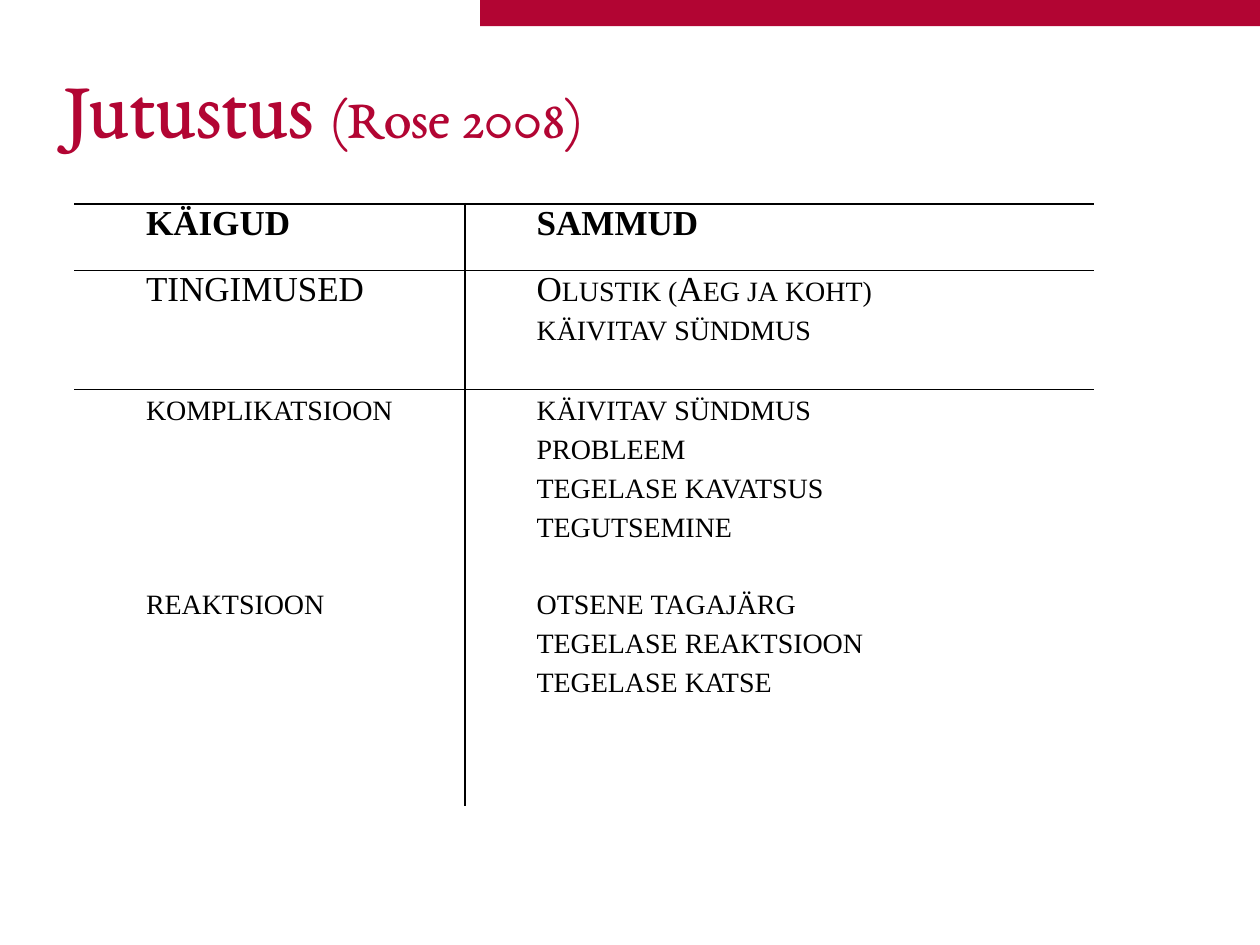
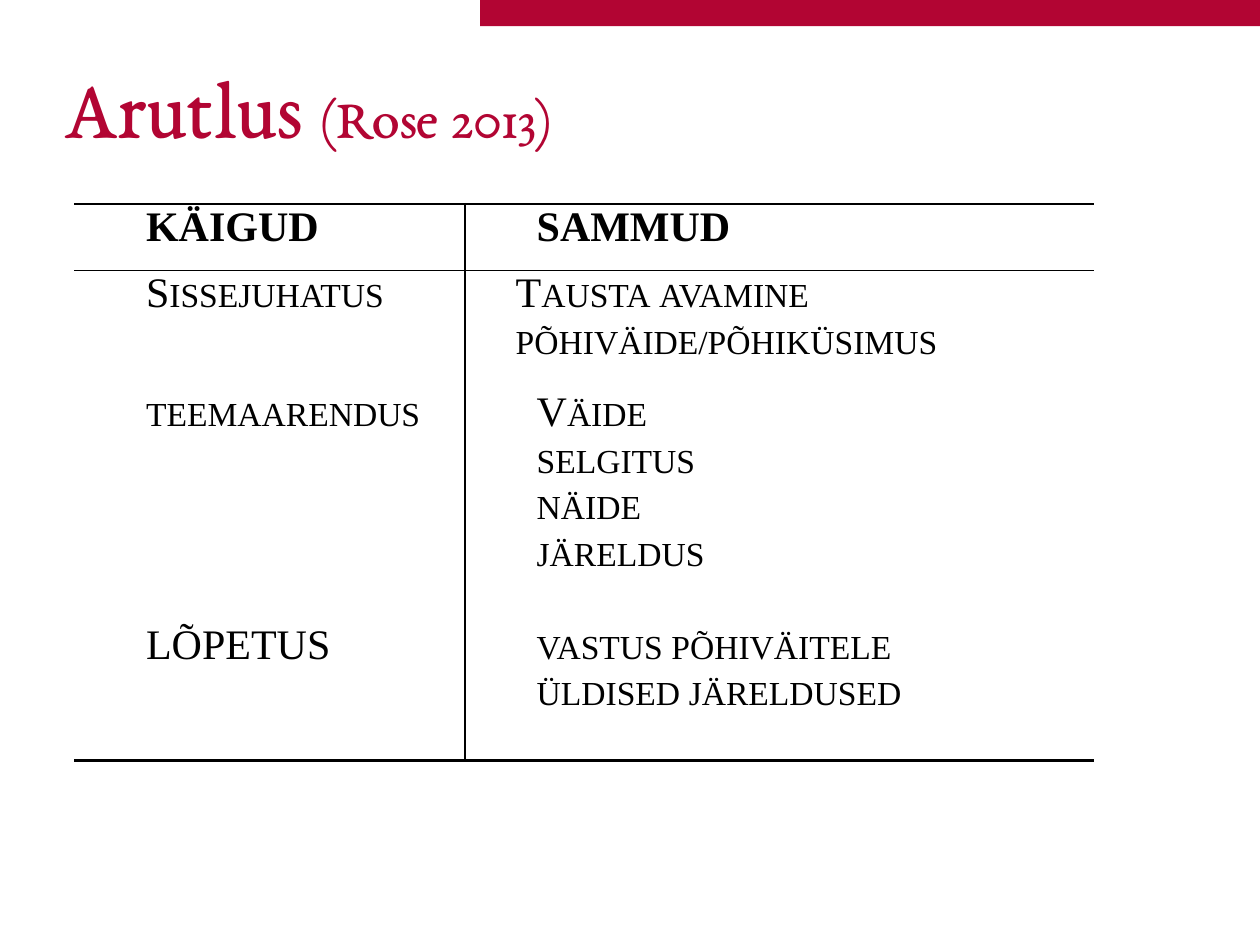
from pptx import Presentation
from pptx.dml.color import RGBColor
from pptx.enum import shapes, text
from pptx.oxml import parse_xml
from pptx.oxml.ns import nsdecls
from pptx.util import Pt

CRIMSON = RGBColor(0xB2, 0x05, 0x33)
BLACK = RGBColor(0, 0, 0)
TITLE_FONT = "EB Garamond"
TABLE_FONT = "Times New Roman"
SLIDE_WIDTH, SLIDE_HEIGHT = 720, 540
BAND_LEFT, BAND_HEIGHT = 274.3, 15
COLUMN_WIDTHS = (223.2, 359.3)
DIVIDER = 1
INDENT, SHORT_INDENT = 36, 24


class Deck:
    def __init__(self):
        self.presentation = Presentation()
        self.presentation.slide_width = Pt(SLIDE_WIDTH)
        self.presentation.slide_height = Pt(SLIDE_HEIGHT)
        self.slide = None

    def add_slide(self, title, source):
        self.slide = self.presentation.slides.add_slide(
            self.presentation.slide_layouts[5])
        self.band()
        self.title(title, source)

    def band(self):
        shape = self.slide.shapes.add_shape(
            shapes.MSO_SHAPE.RECTANGLE, Pt(BAND_LEFT), 0,
            Pt(SLIDE_WIDTH - BAND_LEFT), Pt(BAND_HEIGHT))
        shape.shadow.inherit = False
        shape.fill.solid()
        shape.fill.fore_color.rgb = CRIMSON
        shape.line.fill.background()

    def title(self, title, source):
        shape = self.slide.shapes.title
        shape.left, shape.top = Pt(36), Pt(21.6)
        shape.width, shape.height = Pt(647.3), Pt(89.3)
        frame = shape.text_frame
        frame.margin_left = frame.margin_right = 0
        frame.margin_top = frame.margin_bottom = 0
        frame.vertical_anchor = text.MSO_ANCHOR.MIDDLE
        frame.auto_size = text.MSO_AUTO_SIZE.NONE
        frame.word_wrap = True
        paragraph = frame.paragraphs[0]
        paragraph.alignment = text.PP_ALIGN.LEFT
        paragraph.line_spacing = 0.75
        self.run(paragraph, title + " ", TITLE_FONT, 48, CRIMSON)
        self.run(paragraph, source, TITLE_FONT, 32, CRIMSON)

    def run(self, paragraph, words, font, size, color, bold=False):
        run = paragraph.add_run()
        run.text = words
        run.font.name = font
        run.font.size = Pt(size)
        run.font.color.rgb = color
        run.font.bold = bold
        return run

    def table(self, rows, heights, rules, size, short_rows=()):
        """Rules are the line widths above each row and below the last one.

        Steps in short_rows start at the shorter indent.
        """
        table = self.slide.shapes.add_table(
            len(rows), len(COLUMN_WIDTHS), Pt(42.5), Pt(116.6),
            Pt(sum(COLUMN_WIDTHS)), Pt(sum(heights))).table
        table.first_row = table.horz_banding = False
        for column, width in zip(table.columns, COLUMN_WIDTHS):
            column.width = Pt(width)
        for row_index, (row, height) in enumerate(zip(rows, heights)):
            table.rows[row_index].height = Pt(height)
            for column_index, lines in enumerate(row):
                cell = table.cell(row_index, column_index)
                self.borders(cell, L=DIVIDER * column_index,
                             R=DIVIDER * (1 - column_index),
                             T=rules[row_index], B=rules[row_index + 1])
                short = column_index == 1 and row_index in short_rows
                self.cell_text(cell, lines, size, row_index == 0,
                               SHORT_INDENT if short else INDENT)

    def borders(self, cell, **widths):
        properties = cell._tc.get_or_add_tcPr()
        for side, width in widths.items():
            fill = (f'<a:solidFill><a:srgbClr val="{BLACK}"/></a:solidFill>'
                    if width else "<a:noFill/>")
            properties.append(parse_xml(
                f'<a:ln{side} {nsdecls("a")} w="{Pt(width)}">{fill}</a:ln{side}>'))
        cell.fill.background()

    def cell_text(self, cell, lines, size, header, indent):
        cell.margin_left = cell.margin_right = Pt(5)
        cell.margin_top = cell.margin_bottom = 0
        frame = cell.text_frame
        for index, line in enumerate(lines.split("\n")):
            paragraph = frame.add_paragraph() if index else frame.paragraphs[0]
            properties = paragraph._p.get_or_add_pPr()
            properties.set("marL", "0")
            properties.set("indent", str(Pt(indent)))
            run = self.run(paragraph, line, TABLE_FONT, size, BLACK, header)
            if not line.isupper():
                run.font._element.set("cap", "small")


HEADER = ("KÄIGUD", "SAMMUD")


def main():
    deck = Deck()
    deck.add_slide("Jutustus", "(Rose 2008)")
    deck.table(
        [HEADER,
         ("TINGIMUSED", "Olustik (Aeg ja koht)\nkäivitav sündmus"),
         ("komplikatsioon",
          "käivitav sündmus\nprobleem\ntegelase kavatsus\ntegutsemine"),
         ("reaktsioon",
          "otsene tagajärg\ntegelase reaktsioon\ntegelase katse")],
        heights=(38, 68, 111, 127), rules=(1.5, 1, 1, 0, 0), size=20)

    deck.add_slide("Arutlus", "(Rose 2013)")
    deck.table(
        [HEADER,
         ("Sissejuhatus", "Tausta avamine\npõhiväide/põhiküsimus"),
         ("teemaarendus", "Väide\nselgitus\nnäide\njäreldus"),
         ("LÕPETUS", "vastus põhiväitele\nüldised järeldused")],
        heights=(38, 68, 133, 79), rules=(1.5, 1, 0, 0, 1.5), size=24,
        short_rows=(1,))
    deck.presentation.save("out.pptx")


if __name__ == "__main__":
    main()
